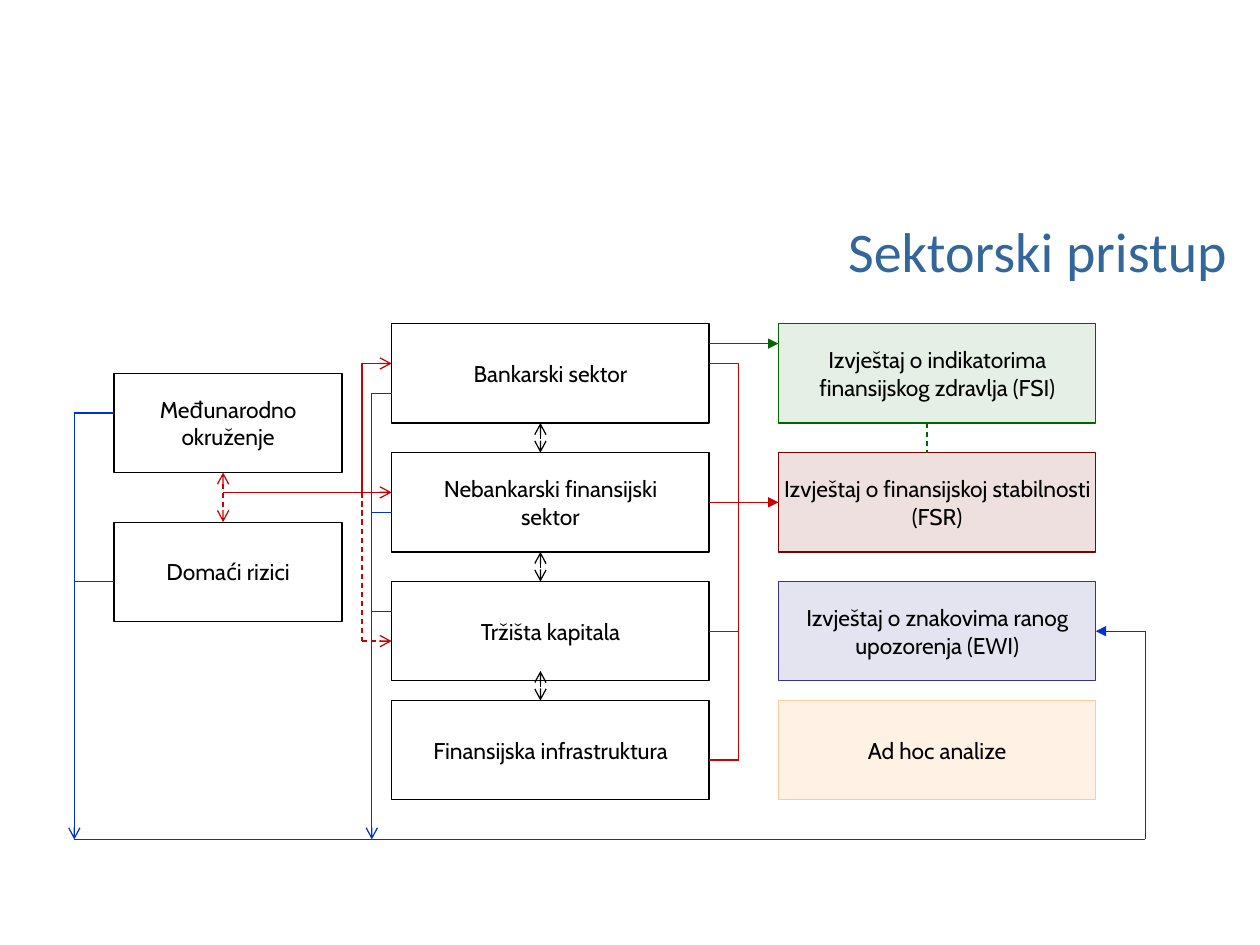
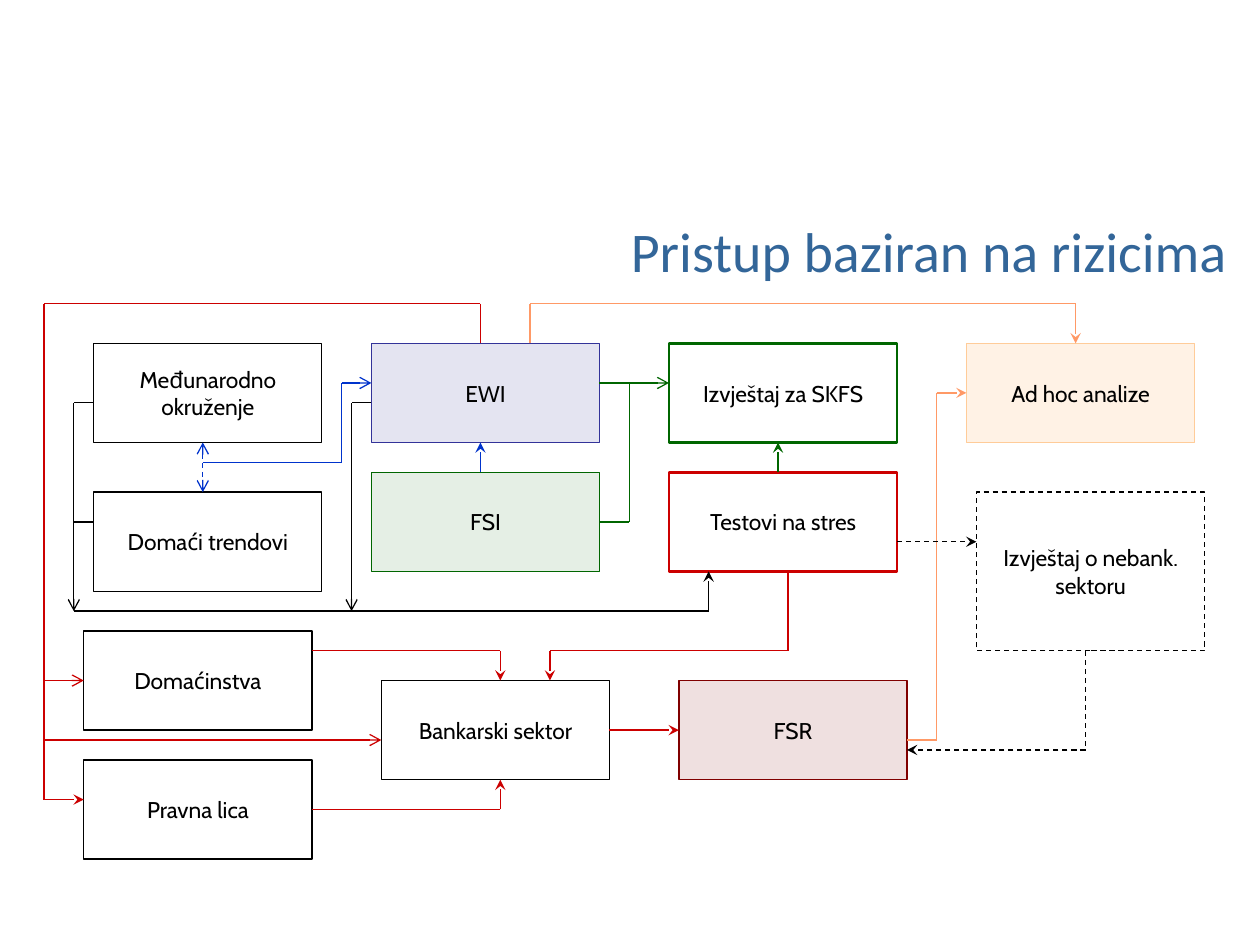
from dataclasses import dataclass
from pptx import Presentation
from pptx import util as u
from pptx.dml.color import RGBColor
from pptx.enum import dml, shapes, text
from pptx.oxml.ns import qn
from lxml import etree


@dataclass(frozen=True)
class Theme:
    """Colours, fonts and sizes shared by the slides."""
    title: str = "336699"
    black: str = "000000"
    red: str = "CC0000"
    green: str = "006600"
    blue: str = "0033CC"
    maroon: str = "800000"
    indigo: str = "333399"
    peach: str = "FFCC99"
    orange: str = "FF9966"
    title_font: str = "Calibri"
    box_font: str = "Cabin"
    title_size: int = 32
    box_size: int = 13
    thin: float = 0.75
    thick: float = 1.5


T = Theme()
FSR = dict(color=T.maroon, tint=12)
FSI = dict(color=T.green, tint=10)
EWI = dict(color=T.indigo, tint=13)
AD_HOC = dict(color=T.peach, tint=25)
BOTH = dict(head="arrow", tail="arrow", dash=True)


def rgb(color):
    """Turn a hex string into a colour."""
    return RGBColor.from_string(color)


def add_run(p, content, font, size, color):
    """Add one formatted run to a paragraph."""
    r = p.add_run()
    r.text = content
    r.font.name = font
    r.font.size = u.Pt(size)
    r.font.color.rgb = rgb(color)


def style_line(line, color, width, dash):
    """Set the colour, width and dash of a line."""
    line.color.rgb = rgb(color)
    line.width = u.Pt(width)
    if dash:
        line.dash_style = dml.MSO_LINE.DASH


class Diagram:
    """Boxes and lines on a square grid that spans a given region."""

    def __init__(self, s, box, columns):
        """Keep the slide, the region's corner and the grid step."""
        self.s = s
        self.left, self.top, width = box
        self.step = width / columns
        self.sites = {}

    def point(self, x, y):
        """Convert a grid position to slide lengths."""
        return (u.Inches(self.left + x * self.step),
                u.Inches(self.top + y * self.step))

    def box(self, x, y, *lines, w=23, h=10, color=T.black, tint=None,
            width=T.thin, dash=False):
        """Draw a labelled rectangle and record its connection sites."""
        size = (u.Inches(n * self.step) for n in (w, h))
        sp = self.s.shapes.add_shape(shapes.MSO_SHAPE.RECTANGLE,
                                     *self.point(x, y), *size)
        sp.shadow.inherit = False
        if tint:
            sp.fill.solid()
            sp.fill.fore_color.rgb = rgb(color)
            clr = sp._element.spPr.find(qn("a:solidFill"))[0]
            etree.SubElement(clr, qn("a:alpha"), val=str(tint * 1000))
        else:
            sp.fill.background()
        style_line(sp.line, color, width, dash)
        tf = sp.text_frame
        tf.word_wrap = True
        tf.vertical_anchor = text.MSO_ANCHOR.MIDDLE
        tf.margin_left = tf.margin_right = 0
        tf.margin_top = tf.margin_bottom = u.Inches(0.05)
        for i, content in enumerate(lines):
            p = tf.add_paragraph() if i else tf.paragraphs[0]
            p.alignment = text.PP_ALIGN.CENTER
            add_run(p, content, T.box_font, T.box_size, T.black)
        middles = ((x + w / 2, y), (x, y + h / 2),
                   (x + w / 2, y + h), (x + w, y + h / 2))
        for i, middle in enumerate(middles):
            self.sites[middle] = sp, i

    def route(self, color, *points, head=None, tail=None, dash=False):
        """Draw straight connectors through the points, joined to box sides."""
        last = len(points) - 2
        for i, (start, end) in enumerate(zip(points, points[1:])):
            c = self.s.shapes.add_connector(
                shapes.MSO_CONNECTOR.STRAIGHT,
                *self.point(*start), *self.point(*end))
            if start in self.sites:
                c.begin_connect(*self.sites[start])
            if end in self.sites:
                c.end_connect(*self.sites[end])
            style_line(c.line, color, T.thin, dash)
            ln = c.line._get_or_add_ln()
            if head and i == 0:
                etree.SubElement(ln, qn("a:headEnd"), type=head)
            if tail and i == last:
                etree.SubElement(ln, qn("a:tailEnd"), type=tail)
            etree.SubElement(c._element.spPr, qn("a:effectLst"))


def titled_slide(prs, title):
    """Add a slide with the shared right-aligned title."""
    s = prs.slides.add_slide(prs.slide_layouts[5])
    sp = s.shapes.title
    sp.left, sp.top, sp.width, sp.height = map(
        u.Inches, (0.84, 1.63, 9, 0.71))
    tf = sp.text_frame
    tf.word_wrap = True
    tf.vertical_anchor = text.MSO_ANCHOR.MIDDLE
    p = tf.paragraphs[0]
    p.alignment = text.PP_ALIGN.RIGHT
    add_run(p, title, T.title_font, T.title_size, T.title)
    return s


def sector_boxes(d):
    """Place the risk sources, the sectors and the reports."""
    d.box(4, 5, "Međunarodno okruženje")
    d.box(4, 20, "Domaći rizici")
    rows = (0, 13, 26, 38)
    sectors = (("Bankarski sektor",),
               ("Nebankarski finansijski", "sektor"),
               ("Tržišta kapitala",),
               ("Finansijska infrastruktura",))
    reports = (("Izvještaj o indikatorima finansijskog zdravlja (FSI)", FSI),
               ("Izvještaj o finansijskoj stabilnosti (FSR)", FSR),
               ("Izvještaj o znakovima ranog upozorenja (EWI)", EWI),
               ("Ad hoc analize", AD_HOC))
    for y, sector, (report, look) in zip(rows, sectors, reports):
        d.box(32, y, *sector, w=32)
        d.box(71, y, report, w=32, **look)


def sector_diagram(s, box):
    """Draw the sector approach inside the box."""
    d = Diagram(s, box, 108)
    sector_boxes(d)
    d.route(T.red, (15, 15), (15, 20), **BOTH)
    d.route(T.red, (15, 17), (32, 17), tail="arrow")
    d.route(T.red, (29, 17), (29, 4), (32, 4), tail="arrow")
    d.route(T.red, (29, 17), (29, 32), (32, 32), tail="arrow", dash=True)
    d.route(T.red, (64, 4), (67, 4), (67, 44), (64, 44))
    d.route(T.red, (64, 18), (71, 18), tail="triangle")
    d.route(T.red, (64, 31), (67, 31))
    d.route(T.green, (64, 2), (71, 2), tail="triangle")
    d.route(T.green, (86, 10), (86, 13), dash=True)
    d.route(T.blue, (4, 9), (0, 9), (0, 52), tail="arrow")
    d.route(T.blue, (4, 26), (0, 26))
    d.route(T.blue, (0, 52), (108, 52), (108, 31), (103, 31), tail="triangle")
    d.route(T.blue, (32, 7), (30, 7), (30, 52), tail="arrow")
    for y in (19, 29):
        d.route(T.blue, (30, y), (32, y))
    for y in (10, 23, 35):
        d.route(T.black, (47, y), (47, y + 3), **BOTH)


def risk_boxes(d):
    """Place the inputs, the tests and the reports."""
    d.box(5, 4, "Međunarodno okruženje")
    d.box(5, 19, "Domaći trendovi")
    d.box(33, 4, "EWI", **EWI)
    d.box(33, 17, "FSI", **FSI)
    d.box(63, 4, "Izvještaj za SKFS", color=T.green, width=T.thick)
    d.box(63, 17, "Testovi na stres", color=T.red, width=T.thick)
    d.box(93, 4, "Ad hoc analize", **AD_HOC)
    d.box(94, 19, "Izvještaj o nebank. sektoru", h=16, dash=True)
    d.box(4, 33, "Domaćinstva")
    d.box(4, 46, "Pravna lica")
    d.box(34, 38, "Bankarski sektor")
    d.box(64, 38, "FSR", **FSR)


def risk_diagram(s, box):
    """Draw the risk-based approach inside the box."""
    d = Diagram(s, box, 117)
    risk_boxes(d)
    d.route(T.blue, (16, 14), (16, 19), **BOTH)
    d.route(T.blue, (16, 16), (30, 16), (30, 8), (33, 8), tail="arrow")
    d.route(T.blue, (44, 17), (44, 14), tail="stealth")
    d.route(T.black, (5, 10), (3, 10), (3, 31), tail="arrow")
    d.route(T.black, (3, 22), (5, 22))
    d.route(T.black, (33, 10), (31, 10), (31, 31), tail="arrow")
    d.route(T.black, (3, 31), (67, 31), (67, 27), tail="stealth")
    d.route(T.green, (56, 8), (63, 8), tail="arrow")
    d.route(T.green, (56, 22), (59, 22), (59, 8))
    d.route(T.green, (74, 17), (74, 14), tail="stealth")
    d.route(T.red, (44, 4), (44, 0), (0, 0), (0, 50), (4, 50), tail="stealth")
    d.route(T.red, (0, 44), (34, 44), tail="arrow")
    d.route(T.red, (0, 38), (4, 38), tail="arrow")
    d.route(T.red, (27, 35), (46, 35), (46, 38), tail="stealth")
    d.route(T.red, (27, 51), (46, 51), (46, 48), tail="stealth")
    d.route(T.red, (57, 43), (64, 43), tail="stealth")
    d.route(T.red, (75, 27), (75, 35), (51, 35), (51, 38), tail="stealth")
    d.route(T.orange, (49, 4), (49, 0), (104, 0), (104, 4), tail="stealth")
    d.route(T.orange, (87, 44), (90, 44), (90, 9), (93, 9), tail="stealth")
    d.route(T.black, (105, 35), (105, 45), (87, 45), tail="stealth", dash=True)
    d.route(T.black, (86, 24), (94, 24), tail="stealth", dash=True)


def main():
    """Build and save the two slides."""
    prs = Presentation()
    prs.slide_width, prs.slide_height = u.Inches(10), u.Inches(7.5)
    sector_diagram(titled_slide(prs, "Sektorski pristup"), (0.59, 2.57, 8.5))
    risk_diagram(titled_slide(prs, "Pristup baziran na rizicima"),
                 (0.35, 2.41, 9.21))
    prs.save("out.pptx")


if __name__ == "__main__":
    main()
